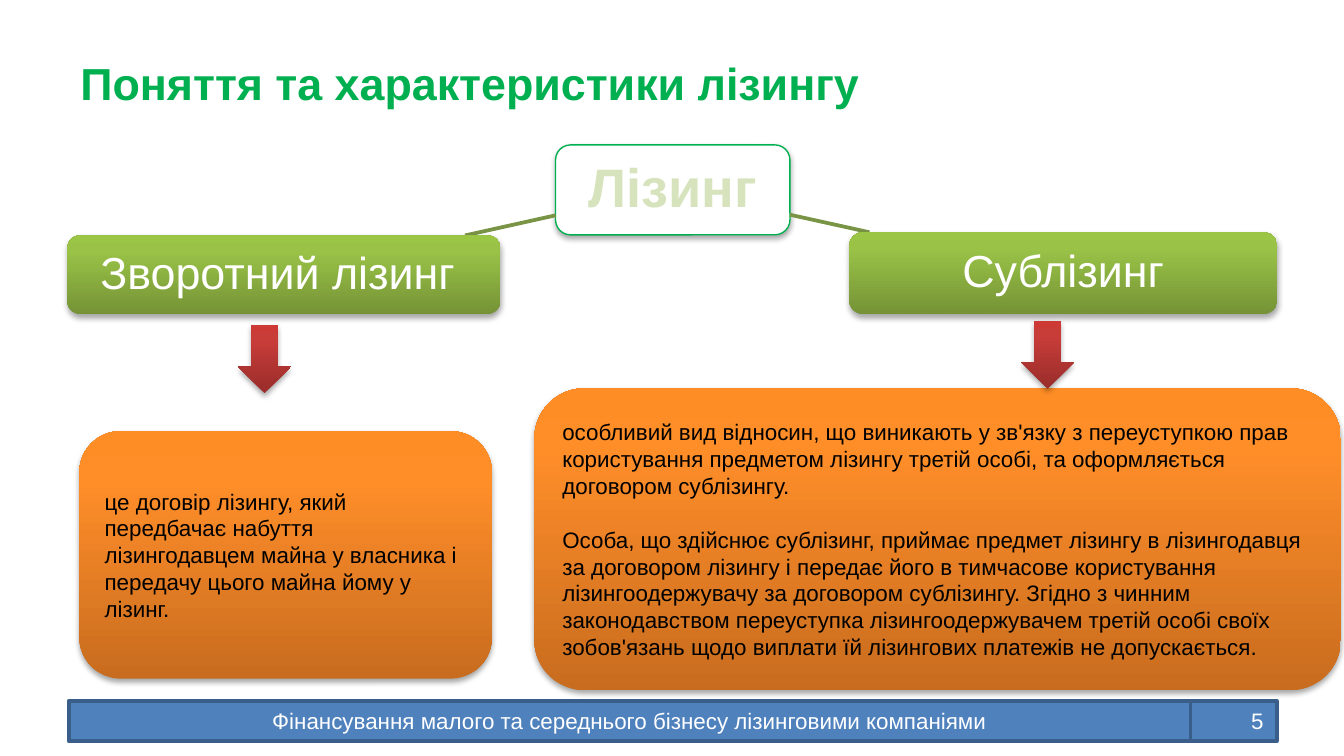
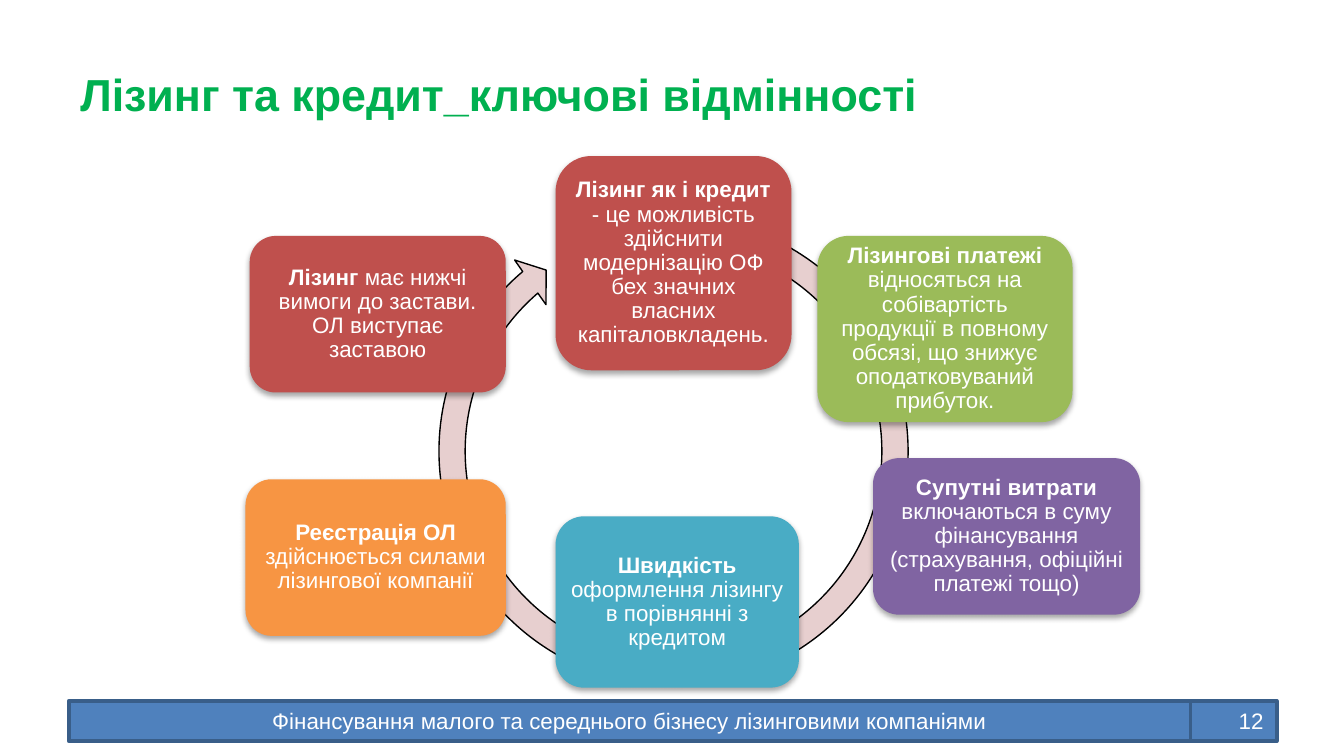
"""Builds two slides on leasing: its types, and how it differs from credit."""
from copy import deepcopy
from dataclasses import dataclass

from pptx import Presentation
from pptx.dml.color import RGBColor as RGB
from pptx.enum.shapes import MSO_CONNECTOR as LINE, MSO_SHAPE as SHAPE
from pptx.enum.text import MSO_ANCHOR as ANCHOR, PP_ALIGN as ALIGN
from pptx.oxml import parse_xml
from pptx.oxml.ns import nsdecls, qn
from pptx.util import Cm, Pt


@dataclass(frozen=True)
class Theme:
    font: str = "Arial"
    title_size: int = 24
    root_size: int = 29
    body_size: int = 12
    accent: str = "00B050"
    white: str = "FFFFFF"
    black: str = "000000"
    pale: str = "D6E3BC"
    branch: str = "7A9446"
    footer: str = "4F81BD"
    footer_line: str = "395E89"
    ring: str = "E7CFCF"
    red: str = "BF504D"
    green: str = "9BBB59"
    purple: str = "8064A2"
    teal: str = "49ACC5"
    orange: str = "F79543"
    green_fade: tuple = ("759336", "99C247", "9BC545")
    orange_fade: tuple = ("C86C1F", "FF8E29", "FF8D25")
    red_fade: tuple = ("992D2B", "C93D39", "CD3A36")


T = Theme()
SHADOW = (
    f'<a:outerShdw {nsdecls("a")} blurRad="39370" dist="22860" dir="5400000" rotWithShape="0">'
    '<a:srgbClr val="000000"><a:alpha val="35000"/></a:srgbClr></a:outerShdw>'
)


def add_box(slide, kind, place, fill, line=None, width=0.75, shadow=True):
    s = slide.shapes.add_shape(kind, *map(Cm, place))
    s.shadow.inherit = False
    if shadow:
        s._element.spPr.find(qn("a:effectLst")).append(parse_xml(SHADOW))
    if isinstance(fill, tuple):
        s.fill.gradient()
        s.fill.gradient_angle = 90
        stops = s._element.spPr.find(".//" + qn("a:gsLst"))
        stops.append(deepcopy(stops[-1]))
        for stop, colour, position in zip(s.fill.gradient_stops, fill, (0, 0.8, 1)):
            stop.color.rgb = RGB.from_string(colour)
            stop.position = position
    else:
        s.fill.solid()
        s.fill.fore_color.rgb = RGB.from_string(fill)
    if line:
        s.line.color.rgb = RGB.from_string(line)
        s.line.width = Pt(width)
    else:
        s.line.fill.background()
    return s


def write(s, text, size=T.body_size, colour=T.white, align=ALIGN.CENTER,
          bold=False, inset=(0.25, 0.13), spacing=1.0, tail=""):
    tf = s.text_frame
    tf.word_wrap = True
    tf.vertical_anchor = ANCHOR.MIDDLE
    tf.margin_left = tf.margin_right = Cm(inset[0])
    tf.margin_top = tf.margin_bottom = Cm(inset[1])
    tf.text = text
    if tail:
        tf.paragraphs[-1].add_run().text = tail
    for i, p in enumerate(tf.paragraphs):
        p.alignment = align
        p.line_spacing = spacing
        if i:
            p.space_before = Pt(14.3)
        for j, r in enumerate(p.runs):
            r.font.name = T.font
            r.font.size = Pt(size)
            r.font.bold = bold and j == 0
            r.font.color.rgb = RGB.from_string(colour)


prs = Presentation()
prs.slide_width, prs.slide_height = Cm(25.4), Cm(14.29)

slides = []
for title, top, number in (
    ("Поняття та характеристики лізингу", 0.36, "5"),
    ("Лізинг та кредит_ключові відмінності", 0.58, "12"),
):
    slide = prs.slides.add_slide(prs.slide_layouts[6])
    s = slide.shapes.add_textbox(Cm(1.27), Cm(top), Cm(19.84), Cm(2.39))
    write(s, title, T.title_size, T.accent, ALIGN.LEFT, bold=True)
    for left, width, text, align in (
        (1.3, 21.2, "Фінансування малого та середнього бізнесу лізинговими компаніями", ALIGN.CENTER),
        (22.5, 1.63, number, ALIGN.RIGHT),
    ):
        s = add_box(slide, SHAPE.RECTANGLE, (left, 13.25, width, 0.76),
                    T.footer, T.footer_line, 2, shadow=False)
        write(s, text, align=align)
    slides.append(slide)
types, differences = slides

s = add_box(types, SHAPE.ROUNDED_RECTANGLE, (10.5, 2.74, 4.43, 1.7), T.white, T.accent)
write(s, "Лізинг", T.root_size, T.pale, bold=True, inset=(0.2, 0.2), spacing=0.9)

for branch, head, name, detail, text, arrow in (
    ((10.5, 4.07, 8.79, 4.45), (1.27, 4.45, 8.19, 1.49), "Зворотний лізинг ",
     (1.5, 8.15, 7.8, 4.68),
     "це договір лізингу, який передбачає набуття лізингодавцем майна у власника "
     "і передачу цього майна йому у лізинг.",
     (4.5, 6.15)),
    ((14.93, 4.06, 16.43, 4.39), (16.05, 4.39, 8.09, 1.55), "Сублізинг",
     (10.1, 7.34, 15.24, 5.71),
     "особливий вид відносин, що виникають у зв'язку з переуступкою прав користування "
     "предметом лізингу третій особі, та оформляється договором сублізингу.\n"
     "Особа, що здійснює сублізинг, приймає предмет лізингу в лізингодавця за договором "
     "лізингу і передає його в тимчасове користування лізингоодержувачу за договором "
     "сублізингу. Згідно з чинним законодавством переуступка лізингоодержувачем третій "
     "особі своїх зобов'язань щодо виплати їй лізингових платежів не допускається.",
     (19.3, 6.07)),
):
    c = types.shapes.add_connector(LINE.STRAIGHT, *map(Cm, branch))
    c.line.color.rgb = RGB.from_string(T.branch)
    c.line.width = Pt(2)
    c._element.spPr.append(parse_xml(f'<a:effectLst {nsdecls("a")}/>'))
    s = add_box(types, SHAPE.ROUNDED_RECTANGLE, head, T.green_fade)
    write(s, name, T.title_size, inset=(0.18, 0.18), spacing=0.9)
    s = add_box(types, SHAPE.ROUNDED_RECTANGLE, detail, T.orange_fade)
    write(s, text, colour=T.black, align=ALIGN.LEFT)
    add_box(types, SHAPE.DOWN_ARROW, (*arrow, 1, 1.28), T.red_fade)

s = add_box(differences, SHAPE.CIRCULAR_ARROW, (8.03, 3.83, 9.4, 9.4),
            T.ring, T.black, shadow=False)
thickness, head_angle, end_angle, start_angle, head_width = 0.0527, 5.2, 229.7, 290, 0.0548
for i, value in enumerate((thickness, head_angle * 0.6, end_angle * 0.6,
                           start_angle * 0.6, head_width)):
    s.adjustments[i] = value

for place, fill, lead, rest in (
    ((10.5, 2.95, 4.46, 4.05), T.red, "Лізинг як і кредит",
     " - це можливість здійснити модернізацію ОФ бех значних власних капіталовкладень."),
    ((15.45, 4.46, 4.82, 3.52), T.green, "Лізингові платежі ",
     "відносяться на собівартість продукції в повному обсязі, що знижує оподатковуваний прибуток."),
    ((16.5, 8.66, 5.05, 2.96), T.purple, "Супутні витрати ",
     "включаються в суму фінансування (страхування, офіційні платежі тощо)"),
    ((10.5, 9.76, 4.6, 3.24), T.teal, "Швидкість ",
     "оформлення лізингу в порівнянні з кредитом"),
    ((4.64, 9.06, 4.92, 2.96), T.orange, "Реєстрація ОЛ",
     " здійснюється силами лізингової компанії"),
    ((4.72, 4.46, 4.84, 2.96), T.red, "Лізинг",
     " має нижчі вимоги до застави. ОЛ виступає заставою"),
):
    s = add_box(differences, SHAPE.ROUNDED_RECTANGLE, place, fill)
    write(s, lead, bold=True, inset=(0.12, 0.12), spacing=0.9, tail=rest)

prs.save("out.pptx")
